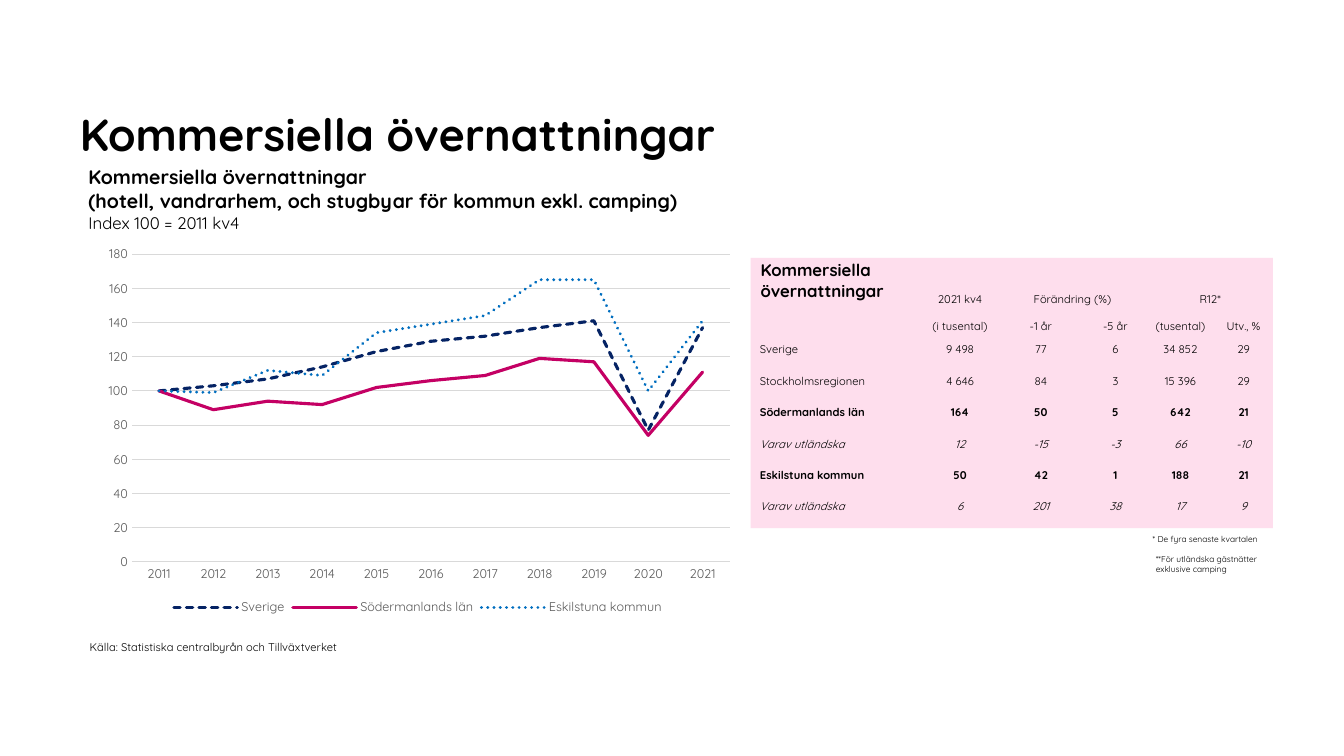
import pptx
import pptx.chart.data
import pptx.dml.color
import pptx.enum.chart
import pptx.enum.dml
import pptx.enum.shapes
import pptx.enum.text
import pptx.oxml
import pptx.oxml.ns
import pptx.util

Cm = pptx.util.Cm
Pt = pptx.util.Pt
RGB = pptx.dml.color.RGBColor.from_string
ANCHOR = pptx.enum.text.MSO_ANCHOR
ALIGN = pptx.enum.text.PP_ALIGN
DASH = pptx.enum.dml.MSO_LINE


class Theme:
    font = "Quicksand"
    black = RGB("000000")
    grey = RGB("595959")
    grid = RGB("D9D9D9")
    pink = RGB("FEDEED")
    navy = RGB("052364")
    magenta = RGB("C40064")
    blue = RGB("006EBF")
    title = Pt(32)
    subtitle = Pt(14)
    heading = Pt(12)
    axis = Pt(9)
    body = Pt(8)
    note = Pt(6)


def style(font, size, color=Theme.black, bold=False, italic=False):
    font.name = Theme.font
    font.size = size
    font.color.rgb = color
    font.bold = bold
    font.italic = italic


def add_run(p, text, size, bold=False, italic=False):
    r = p.add_run()
    r.text = text
    style(r.font, size, bold=bold, italic=italic)


prs = pptx.Presentation()
prs.slide_width = Cm(33.87)
prs.slide_height = Cm(19.05)
s = prs.slides.add_slide(prs.slide_layouts[5])

title = s.shapes.title
title.left, title.top, title.width, title.height = Cm(2.01), Cm(0.94), Cm(23.42), Cm(3.1)
tf = title.text_frame
tf.auto_size = pptx.enum.text.MSO_AUTO_SIZE.NONE
tf.margin_left = tf.margin_right = tf.margin_top = tf.margin_bottom = 0
tf.vertical_anchor = ANCHOR.BOTTOM
tf.paragraphs[0].alignment = ALIGN.LEFT
add_run(tf.paragraphs[0], "Kommersiella övernattningar", Theme.title, bold=True)

panel = s.shapes.add_shape(pptx.enum.shapes.MSO_SHAPE.RECTANGLE,
                           Cm(18.92), Cm(6.5), Cm(13.16), Cm(6.81))
panel.shadow.inherit = False
panel.fill.solid()
panel.fill.fore_color.rgb = Theme.pink
panel.line.fill.background()

texts = [
    (2.01, 16, 7.04, 0.61, False,
     [[("Källa: Statistiska centralbyrån och Tillväxtverket", Theme.body, False)]]),
    (18.92, 6.43, 6.1, 1.4, True,
     [[("Kommersiella", Theme.heading, True), ("övernattningar", Theme.heading, True)]]),
    (28.8, 13.34, 3.28, 0.51, False,
     [[("* De fyra senaste kvartalen", Theme.note, False)]]),
    (1.98, 4.04, 16.38, 1.96, True,
     [[("Kommersiella övernattningar", Theme.subtitle, True)],
      [("(hotell, vandrarhem, och stugbyar för kommun exkl. camping)", Theme.subtitle, True),
       ("Index 100 = 2011 kv4", Theme.heading, False)]]),
    (28.88, 13.84, 3.15, 0.76, True,
     [[("**För utländska gästnätter exklusive camping", Theme.note, False)]]),
]
for left, top, width, height, wrap, paragraphs in texts:
    tf = s.shapes.add_textbox(Cm(left), Cm(top), Cm(width), Cm(height)).text_frame
    tf.word_wrap = wrap
    for i, lines in enumerate(paragraphs):
        p = tf.add_paragraph() if i else tf.paragraphs[0]
        for j, (text, size, bold) in enumerate(lines):
            if j:
                p.add_line_break()
            add_run(p, text, size, bold=bold)

rows = [
    ["", "2021 kv4", "Förändring (%)", "", "R12*", ""],
    ["", "(i tusental)", "-1 år", "-5 år", "(tusental)", "Utv., %"],
    ["Sverige", "9 498", "77", "6", "34 852", "29"],
    ["Stockholmsregionen", "4 646", "84", "3", "15 396", "29"],
    ["Södermanlands län", "164", "50", "5", "642", "21"],
    ["Varav utländska", "12", "-15", "-3", "66", "-10"],
    ["Eskilstuna kommun", "50", "42", "1", "188", "21"],
    ["Varav utländska", "6", "201", "38", "17", "9"],
]
col_widths = [4.29, 1.91, 2.16, 1.6, 1.68, 1.5]
row_heights = [0.66, 0.69] + [0.79] * 6
frame = s.shapes.add_table(len(rows), len(col_widths), Cm(18.95), Cm(7.06),
                           Cm(sum(col_widths)), Cm(sum(row_heights)))
table = frame.table
table.first_row = table.horz_banding = False
style_id = table._tbl.tblPr.find(pptx.oxml.ns.qn("a:tableStyleId"))
style_id.text = "{2D5ABB26-0587-4C30-8999-92F81FD0307C}"
for col, width in zip(table.columns, col_widths):
    col.width = Cm(width)
for row, height in zip(table.rows, row_heights):
    row.height = Cm(height)
for i, values in enumerate(rows):
    for j, value in enumerate(values):
        cell = table.cell(i, j)
        cell.fill.background()
        cell.margin_left = Cm(0.02 if j else 0.2)
        cell.margin_right = cell.margin_top = Cm(0.02)
        cell.margin_bottom = 0
        cell.vertical_anchor = ANCHOR.MIDDLE if i > 1 else ANCHOR.BOTTOM
        p = cell.text_frame.paragraphs[0]
        p.alignment = ALIGN.CENTER if j else ALIGN.LEFT
        if value:
            add_run(p, value, Theme.body, bold=i in (4, 6), italic=i in (5, 7))
        else:
            end = pptx.oxml.parse_xml(f'<a:endParaRPr {pptx.oxml.ns.nsdecls("a")}/>')
            end.set("sz", str(int(Theme.body.pt * 100)))
            p._p.append(end)
for j in (2, 4):
    table.cell(0, j).merge(table.cell(0, j + 1))

series = [
    ("Sverige", [100, 103, 107, 114, 123, 129, 132, 137, 141, 77, 137],
     Theme.navy, DASH.SQUARE_DOT),
    ("Södermanlands län", [100, 89, 94, 92, 102, 106, 109, 119, 117, 74, 111],
     Theme.magenta, DASH.SOLID),
    ("Eskilstuna kommun", [100, 99, 112, 109, 134, 139, 144, 165, 165, 100, 141],
     Theme.blue, DASH.ROUND_DOT),
]
data = pptx.chart.data.CategoryChartData()
data.categories = [str(year) for year in range(2011, 2022)]
for name, values, color, dash in series:
    data.add_series(name, values)
chart = s.shapes.add_chart(pptx.enum.chart.XL_CHART_TYPE.LINE, Cm(2.34), Cm(6.02),
                           Cm(16.38), Cm(9.58), data).chart
style(chart.font, Pt(10))
chart.has_title = False
chart.has_legend = True
chart.legend.position = pptx.enum.chart.XL_LEGEND_POSITION.BOTTOM
chart.legend.include_in_layout = False
style(chart.legend.font, Theme.axis, Theme.grey)
plot = chart.plots[0]
plot.vary_by_categories = False
for line, (name, values, color, dash) in zip(plot.series, series):
    line.smooth = False
    line.marker.style = pptx.enum.chart.XL_MARKER_STYLE.NONE
    line.format.line.color.rgb = color
    line.format.line.width = Pt(2.25)
    line.format.line.dash_style = dash
    line.format.line._ln.set("cap", "rnd")

for axis in (chart.category_axis, chart.value_axis):
    axis.major_tick_mark = axis.minor_tick_mark = pptx.enum.chart.XL_TICK_MARK.NONE
    style(axis.tick_labels.font, Theme.axis, Theme.grey)
value_axis = chart.value_axis
value_axis.minimum_scale, value_axis.maximum_scale, value_axis.major_unit = 0, 180, 20
value_axis.format.line.fill.background()
value_axis.has_major_gridlines = True
for line in (chart.category_axis.format.line, value_axis.major_gridlines.format.line):
    line.color.rgb = Theme.grid
    line.width = Pt(0.75)

plot_area = chart._chartSpace.chart.plotArea
for old in plot_area.findall(pptx.oxml.ns.qn("c:layout")):
    plot_area.remove(old)
plot_area.insert(0, pptx.oxml.parse_xml(
    f'<c:layout {pptx.oxml.ns.nsdecls("c")}><c:manualLayout><c:layoutTarget val="inner"/>'
    '<c:xMode val="edge"/><c:yMode val="edge"/><c:x val="0.06"/><c:y val="0.04"/>'
    '<c:w val="0.92"/><c:h val="0.81"/></c:manualLayout></c:layout>'))

prs.save("out.pptx")
